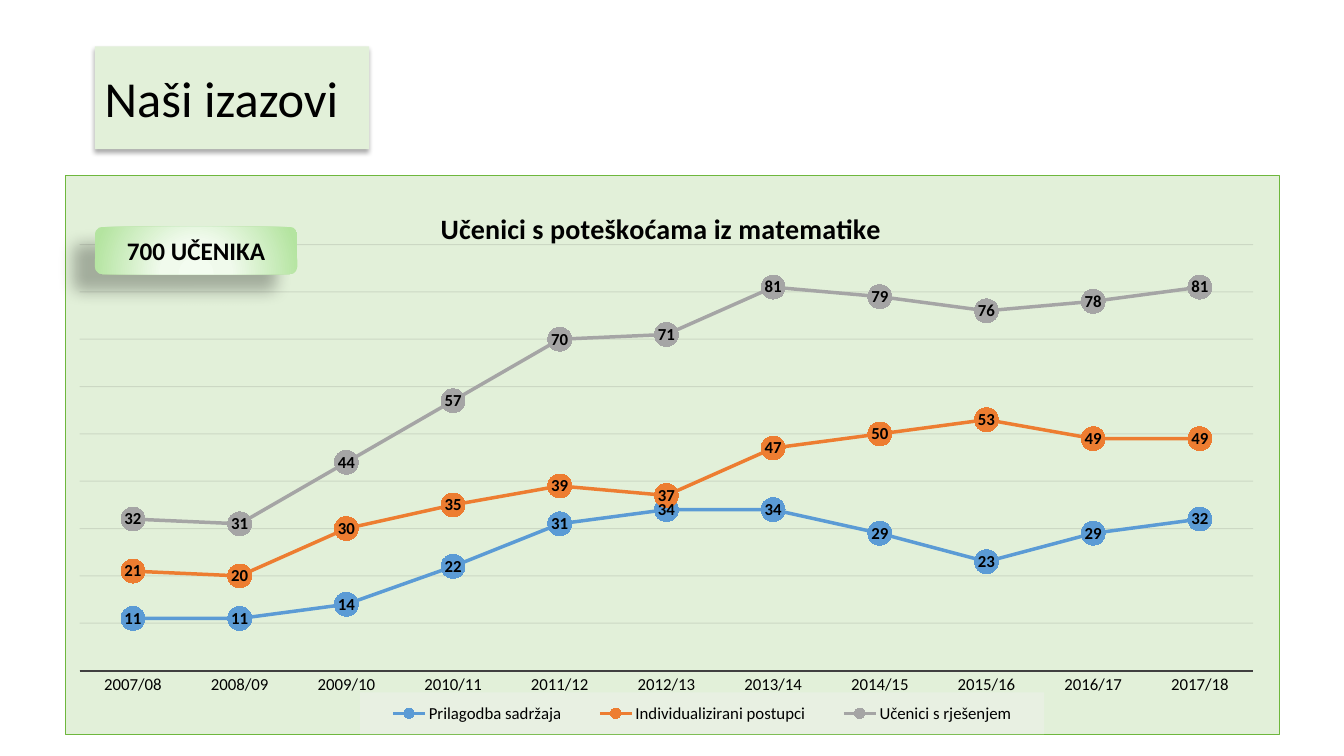
from lxml import etree
from pptx import Presentation
from pptx.chart.data import CategoryChartData
from pptx.dml.color import RGBColor
from pptx.enum.chart import (XL_CHART_TYPE as ChartType, XL_LABEL_POSITION as LabelPosition,
                             XL_LEGEND_POSITION as LegendPosition, XL_MARKER_STYLE as MarkerStyle,
                             XL_TICK_MARK as TickMark)
from pptx.enum.shapes import MSO_SHAPE as ShapeType
from pptx.enum.text import MSO_ANCHOR as Anchor, PP_ALIGN as Align
from pptx.oxml import parse_xml
from pptx.oxml.ns import nsdecls, qn
from pptx.util import Inches, Pt

FONT = "Calibri"
BLACK = RGBColor(0x00, 0x00, 0x00)
PALE_GREEN = RGBColor(0xE2, 0xF0, 0xD9)
AXIS_GRAY = RGBColor(0x40, 0x40, 0x40)
GRID_BLACK = RGBColor(0x0D, 0x0D, 0x0D)
BLUE = RGBColor(0x5B, 0x9B, 0xD5)
ORANGE = RGBColor(0xED, 0x7D, 0x31)
GRAY = RGBColor(0xA5, 0xA5, 0xA5)
BORDER_GREEN = RGBColor(0x6E, 0xB7, 0x3D)
LEGEND_GRAY = RGBColor(0xF2, 0xF2, 0xF2)
BADGE_STOPS = [(0, RGBColor(0xF3, 0xFC, 0xF0)), (34, RGBColor(0xF0, 0xFA, 0xEC)),
               (100, RGBColor(0xB4, 0xE4, 0xA0))]

TITLE_BOX = (0.94, 0.46, 2.72, 1.02)
CHART_BOX = (0.64, 1.74, 12.06, 5.55)
BADGE_BOX = (0.94, 2.25, 2.01, 0.47)

SCHOOL_YEARS = [f"{year}/{(year + 1) % 100:02d}" for year in range(2007, 2018)]
SERIES = [
    ("Prilagodba sadržaja", BLUE, [11, 11, 14, 22, 31, 34, 34, 29, 23, 29, 32]),
    ("Individualizirani postupci", ORANGE, [21, 20, 30, 35, 39, 37, 47, 50, 53, 49, 49]),
    ("Učenici s rješenjem", GRAY, [32, 31, 44, 57, 70, 71, 81, 79, 76, 78, 81]),
]


def set_font(font, size, bold=False):
    values = {"name": FONT, "size": Pt(size), "bold": bold}
    for name, value in values.items():
        setattr(font, name, value)
    font.color.rgb = BLACK


def add_shadow(shape, opacity, blur, distance, angle):
    shape.shadow.inherit = False
    effects = shape._element.spPr.find(qn("a:effectLst"))
    effects.append(parse_xml(
        f'<a:outerShdw {nsdecls("a")} blurRad="{Pt(blur)}" dist="{Pt(distance)}" '
        f'dir="{angle * 60000}" algn="ctr" rotWithShape="0"><a:srgbClr val="{BLACK}">'
        f'<a:alpha val="{opacity * 1000}"/></a:srgbClr></a:outerShdw>'))


def add_text_shape(slide, box, text, size, bold, align):
    shape = slide.shapes.add_shape(ShapeType.ROUNDED_RECTANGLE, *map(Inches, box))
    shape.line.fill.background()
    frame = shape.text_frame
    frame.word_wrap = True
    frame.vertical_anchor = Anchor.MIDDLE
    paragraph = frame.paragraphs[0]
    paragraph.alignment = align
    run = paragraph.add_run()
    run.text = text
    set_font(run.font, size, bold)
    return shape


def add_title(slide, box):
    shape = add_text_shape(slide, box, "Naši izazovi", 36, False, Align.LEFT)
    shape.adjustments[0] = 0
    shape.fill.solid()
    shape.fill.fore_color.rgb = PALE_GREEN
    add_shadow(shape, 32, 3.5, 2.2, 90)


def add_badge(slide, box):
    shape = add_text_shape(slide, box, "700 UČENIKA", 18, True, Align.CENTER)
    shape.fill.gradient()
    gradient = shape._element.spPr.find(qn("a:gradFill"))
    stops = "".join(f'<a:gs pos="{position * 1000}"><a:srgbClr val="{color}"/></a:gs>'
                    for position, color in BADGE_STOPS)
    gradient.getparent().replace(gradient, parse_xml(
        f'<a:gradFill {nsdecls("a")} rotWithShape="1"><a:gsLst>{stops}</a:gsLst>'
        '<a:path path="circle"><a:fillToRect l="50000" t="155000" r="50000" b="-55000"/>'
        '</a:path></a:gradFill>'))
    add_shadow(shape, 28, 11.8, 19.7, 141)


def set_layout(element, previous_tag=None, inner=False, **shares):
    """Place a chart part by shares of the chart's size."""
    for layout in element.findall(qn("c:layout")):
        element.remove(layout)
    layout = parse_xml(f'<c:layout {nsdecls("c")}><c:manualLayout/></c:layout>')
    entries = {"layoutTarget": "inner"} if inner else {}
    entries.update({f"{key}Mode": "edge" for key in "xy"})
    entries.update(shares)
    for name, value in entries.items():
        etree.SubElement(layout[0], qn(f"c:{name}")).set("val", str(value))
    if previous_tag:
        element.find(qn(previous_tag)).addnext(layout)
    else:
        element.insert(0, layout)


def fill_chart_part(element, color, opacity=100, border=None):
    line = f'<a:solidFill><a:srgbClr val="{border}"/></a:solidFill>' if border else "<a:noFill/>"
    element.find(qn("c:txPr")).addprevious(parse_xml(
        f'<c:spPr {nsdecls("c", "a")}><a:solidFill><a:srgbClr val="{color}">'
        f'<a:alpha val="{opacity * 1000}"/></a:srgbClr></a:solidFill>'
        f'<a:ln w="{Pt(0.75)}">{line}</a:ln></c:spPr>'))


def format_axes(chart):
    years = chart.category_axis
    years.major_tick_mark = years.minor_tick_mark = TickMark.NONE
    set_font(years.tick_labels.font, 12)
    years.format.line.color.rgb = AXIS_GRAY
    years.format.line.width = Pt(1.5)
    pupils = chart.value_axis
    scale = {"minimum_scale": 0, "maximum_scale": 90, "major_unit": 10,
             "has_major_gridlines": True, "visible": False}
    for name, value in scale.items():
        setattr(pupils, name, value)
    grid = pupils.major_gridlines.format.line
    grid.color.rgb = GRID_BLACK
    grid.width = Pt(0.75)
    for color in pupils._element.find(qn("c:majorGridlines")).iter(qn("a:srgbClr")):
        etree.SubElement(color, qn("a:alpha")).set("val", "10000")


def format_series(series, color):
    series.smooth = False
    series.format.line.color.rgb = color
    series.format.line.width = Pt(2.5)
    marker = series.marker
    marker.style = MarkerStyle.CIRCLE
    marker.size = 17
    marker.format.fill.solid()
    marker.format.fill.fore_color.rgb = color
    marker.format.line.fill.background()
    labels = series.data_labels
    labels.show_value = True
    labels.position = LabelPosition.CENTER
    set_font(labels.font, 12, True)


def add_pupil_chart(slide, box):
    data = CategoryChartData()
    data.categories = SCHOOL_YEARS
    for name, _, values in SERIES:
        data.add_series(name, values)
    chart = slide.shapes.add_chart(ChartType.LINE_MARKERS, *map(Inches, box), data).chart
    set_font(chart.font, 10)
    fill_chart_part(chart._chartSpace, PALE_GREEN, border=BORDER_GREEN)
    chart.plots[0].vary_by_categories = False
    for series, (_, color, _) in zip(chart.plots[0].series, SERIES):
        format_series(series, color)
    format_axes(chart)

    chart.has_title = True
    run = chart.chart_title.text_frame.paragraphs[0].add_run()
    run.text = "Učenici s poteškoćama iz matematike"
    set_font(run.font, 20, True)
    set_layout(chart.chart_title._element, "c:tx", x=0.305, y=0.05)

    chart.has_legend = True
    legend = chart.legend
    legend.position = LegendPosition.BOTTOM
    legend.include_in_layout = False
    set_font(legend.font, 12)
    fill_chart_part(legend._element, LEGEND_GRAY, 39)
    set_layout(legend._element, "c:legendPos", x=0.243, y=0.925, w=0.563, h=0.075)
    set_layout(chart._chartSpace.chart.plotArea, inner=True,
               x=0.012, y=0.123, w=0.966, h=0.763)


def main():
    presentation = Presentation()
    presentation.slide_width = Inches(13.33)
    presentation.slide_height = Inches(7.5)
    slide = presentation.slides.add_slide(presentation.slide_layouts[6])
    add_title(slide, TITLE_BOX)
    add_pupil_chart(slide, CHART_BOX)
    add_badge(slide, BADGE_BOX)
    presentation.save("out.pptx")


if __name__ == "__main__":
    main()
